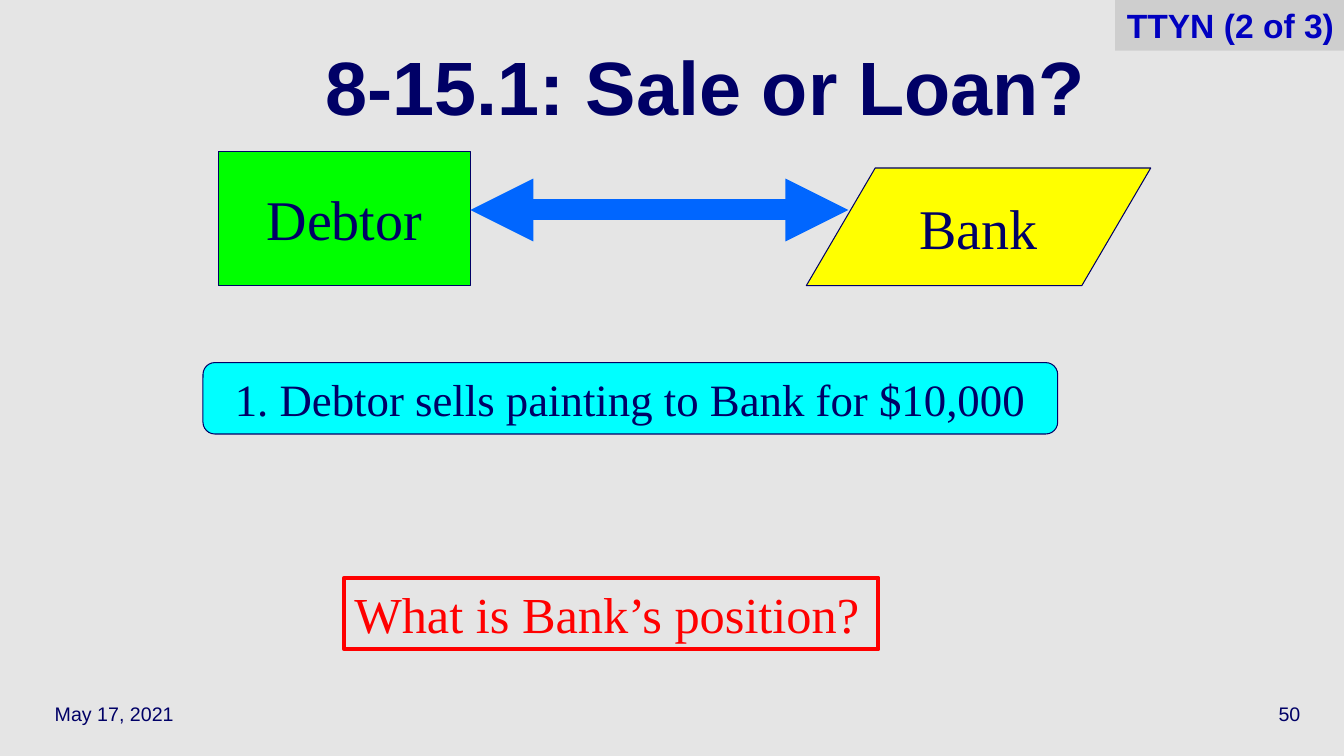
from lxml.etree import SubElement
from pptx import Presentation
from pptx.dml.color import RGBColor
from pptx.enum.shapes import MSO_CONNECTOR, MSO_SHAPE as Shape
from pptx.enum.text import MSO_ANCHOR as Anchor, PP_ALIGN as Align
from pptx.oxml.ns import qn
from pptx.util import Pt

THEME = {
    "background": "E5E5E5", "tag_fill": "CECECE", "navy": "000066",
    "tag_blue": "0000C0", "arrow": "0066FF", "red": "FF0000",
    "green": "00FF00", "yellow": "FFFF00", "cyan": "00FFFF",
    "sans": "Arial", "serif": "Times New Roman",
    "footer": 14, "tag": 24, "step": 32, "question": 36, "party": 40, "title": 54,
}
SLIDE_SIZE = (960, 540)

FOOTER = {"size": "footer", "font": "sans", "wrap": False}
PARTY = {"size": "party", "align": Align.CENTER, "line": ("navy", 0.75), "wrap": False}

# text, (left, top, width, height), format values
ITEMS = [
    ("May 17, 2021", (32, 492, 200, 36), {**FOOTER, "wrap": True}),
    ("50", (736, 492, 200, 36), {**FOOTER, "wrap": True, "align": Align.RIGHT}),
    ("8-15.1: Sale or Loan?", (64, 24, 880, 90),
     {"size": "title", "font": "sans", "bold": True, "align": Align.CENTER,
      "line_spacing": 0.7}),
    ("Bank", (576, 120, 246, 84),
     {**PARTY, "kind": Shape.FLOWCHART_DATA, "fill": "yellow"}),
    ("Debtor", (156, 108, 180, 96),
     {**PARTY, "kind": Shape.FLOWCHART_PROCESS, "fill": "green"}),
    ("1. Debtor sells painting to Bank for $10,000", (145, 259, 610.5, 51),
     {"kind": Shape.FLOWCHART_ALTERNATE_PROCESS, "fill": "cyan",
      "line": ("navy", 0.75), "size": "step", "align": Align.CENTER}),
    ("What is Bank’s position?", (246, 412.75, 381.5, 51),
     {"kind": Shape.RECTANGLE, "line": ("red", 3), "size": "question",
      "color": "red", "anchor": Anchor.TOP}),
    ("TTYN (2 of 3)", (796.5, 0, 163.5, 36.25),
     {"kind": Shape.RECTANGLE, "fill": "tag_fill", "size": "tag", "font": "sans",
      "color": "tag_blue", "bold": True, "align": Align.RIGHT, "anchor": Anchor.TOP}),
]
ARROW = {"start": (336, 150), "end": (606, 150), "width": 15}


def color(name):
    return RGBColor.from_string(THEME[name])


def set_all(target, values):
    for name, value in values.items():
        setattr(target, name, value)


def add_item(slide, text, box, style):
    """Add a text box, or a preset shape when the style names a kind."""
    lengths = [Pt(value) for value in box]
    if "kind" in style:
        shape = slide.shapes.add_shape(style["kind"], *lengths)
        shape.shadow.inherit = False
    else:
        shape = slide.shapes.add_textbox(*lengths)

    if "fill" in style:
        shape.fill.solid()
        shape.fill.fore_color.rgb = color(style["fill"])
    else:
        shape.fill.background()
    if "line" in style:
        line_color, width = style["line"]
        shape.line.color.rgb = color(line_color)
        shape.line.width = Pt(width)
    else:
        shape.line.fill.background()

    frame = shape.text_frame
    set_all(frame, {"word_wrap": style.get("wrap", True),
                    "vertical_anchor": style.get("anchor", Anchor.MIDDLE)})
    paragraph = frame.paragraphs[0]
    set_all(paragraph, {"alignment": style.get("align", Align.LEFT),
                        "line_spacing": style.get("line_spacing")})
    run = paragraph.add_run()
    run.text = text
    set_all(run.font, {"name": THEME[style.get("font", "serif")],
                       "size": Pt(THEME[style["size"]]),
                       "bold": style.get("bold", False)})
    run.font.color.rgb = color(style.get("color", "navy"))


def add_double_arrow(slide, start, end, width):
    points = [Pt(value) for value in start + end]
    arrow = slide.shapes.add_connector(MSO_CONNECTOR.STRAIGHT, *points)
    arrow.line.color.rgb = color("arrow")
    arrow.line.width = Pt(width)
    properties = arrow._element.spPr
    line = properties.find(qn("a:ln"))
    for tag in ("a:headEnd", "a:tailEnd"):
        SubElement(line, qn(tag), type="triangle")
    SubElement(properties, qn("a:effectLst"))


def main():
    presentation = Presentation()
    width, height = SLIDE_SIZE
    set_all(presentation, {"slide_width": Pt(width), "slide_height": Pt(height)})
    slide = presentation.slides.add_slide(presentation.slide_layouts[6])
    slide.background.fill.solid()
    slide.background.fill.fore_color.rgb = color("background")
    for item in ITEMS:
        add_item(slide, *item)
    add_double_arrow(slide, **ARROW)
    presentation.save("out.pptx")


if __name__ == "__main__":
    main()
